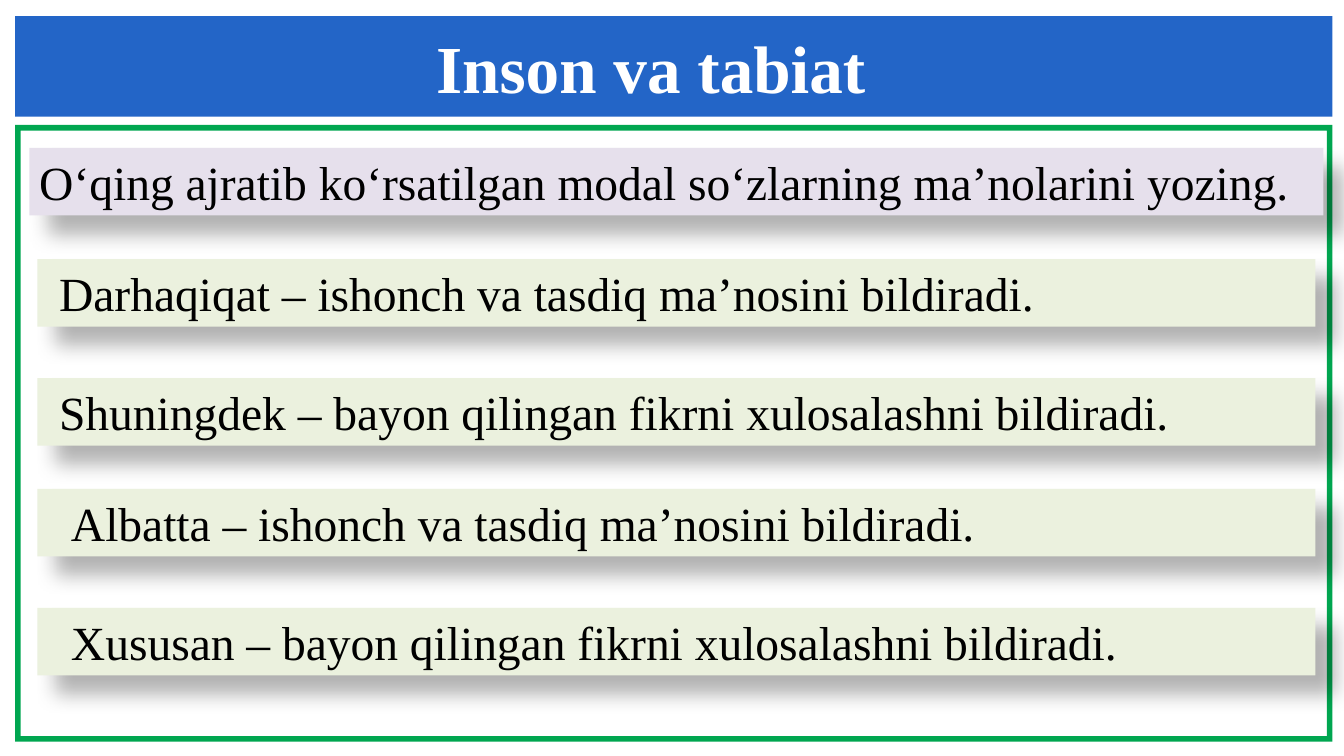
import pptx
import pptx.dml.color
import pptx.enum.shapes
import pptx.enum.text
import pptx.oxml
import pptx.oxml.ns
import pptx.util
from pptx.util import Cm

BLUE = pptx.dml.color.RGBColor(0x23, 0x65, 0xC7)
GREEN = pptx.dml.color.RGBColor(0x00, 0xA6, 0x50)
LILAC = pptx.dml.color.RGBColor(0xE6, 0xE0, 0xEC)
PALE_GREEN = pptx.dml.color.RGBColor(0xEB, 0xF1, 0xDE)
WHITE = pptx.dml.color.RGBColor(0xFF, 0xFF, 0xFF)
BLACK = pptx.dml.color.RGBColor(0x00, 0x00, 0x00)

FONT = "Times New Roman"
TITLE_FORMAT = {"name": FONT, "size": pptx.util.Pt(48), "bold": True}
BODY_FORMAT = {"name": FONT, "size": pptx.util.Pt(34), "bold": False}

PROMPT = "O‘qing ajratib ko‘rsatilgan modal so‘zlarning ma’nolarini yozing."
# Top and text indent in centimetres, then the wording
ANSWERS = [
    (6.53, 0.3, "Darhaqiqat – ishonch va tasdiq ma’nosini bildiradi."),
    (9.53, 0.3, "Shuningdek – bayon qilingan fikrni xulosalashni bildiradi."),
    (12.32, 0.6, "Albatta – ishonch va tasdiq ma’nosini bildiradi."),
    (15.32, 0.6, "Xususan – bayon qilingan fikrni xulosalashni bildiradi."),
]


def paint(shape, color):
    shape.shadow.inherit = False
    shape.fill.solid()
    shape.fill.fore_color.rgb = color
    shape.line.fill.background()


def add_bar(slide, left, top, width, height, color):
    shape = slide.shapes.add_shape(
        pptx.enum.shapes.MSO_SHAPE.RECTANGLE, Cm(left), Cm(top), Cm(width), Cm(height))
    paint(shape, color)
    return shape


def add_frame(slide, left, top, right, bottom, thickness):
    def corners(inset):
        x1, x2 = Cm(left + inset), Cm(right - inset)
        y1, y2 = Cm(top + inset), Cm(bottom - inset)
        return [(x1, y1), (x2, y1), (x2, y2), (x1, y2)]

    outer, inner = corners(0), corners(thickness)
    builder = slide.shapes.build_freeform(*outer[0])
    builder.add_line_segments(outer[1:], close=True)
    builder.move_to(*inner[0])
    builder.add_line_segments(inner[1:], close=True)
    paint(builder.convert_to_shape(), GREEN)


def write(shape, text, color, formats, indent=0):
    frame = shape.text_frame
    frame.word_wrap = True
    frame.vertical_anchor = pptx.enum.text.MSO_ANCHOR.TOP
    frame.margin_left = Cm(0.25 + indent)
    paragraph = frame.paragraphs[0]
    paragraph.alignment = pptx.enum.text.PP_ALIGN.LEFT
    run = paragraph.add_run()
    run.text = text
    for name, value in formats.items():
        setattr(run.font, name, value)
    run.font.color.rgb = color


def add_shadow(shape):
    effects = shape._element.spPr.find(pptx.oxml.ns.qn("a:effectLst"))
    effects.append(pptx.oxml.parse_xml(
        f'<a:outerShdw {pptx.oxml.ns.nsdecls("a")} blurRad="{pptx.util.Pt(15)}" '
        f'dist="{pptx.util.Pt(18)}" dir="2700000" algn="tl" rotWithShape="0">'
        '<a:srgbClr val="000000"><a:alpha val="30000"/></a:srgbClr></a:outerShdw>'))


def add_card(slide, left, top, width, color, text, indent=0):
    card = add_bar(slide, left, top, width, 1.7, color)
    add_shadow(card)
    write(card, text, BLACK, BODY_FORMAT, indent)


def main():
    presentation = pptx.Presentation()
    presentation.slide_width = Cm(33.87)
    presentation.slide_height = Cm(19.05)
    slide = presentation.slides.add_slide(presentation.slide_layouts[6])

    # Green frame and title banner
    add_frame(slide, 0.38, 3.15, 33.58, 18.69, 0.14)
    add_bar(slide, 0.38, 0.41, 33.2, 2.53, BLUE)
    title = slide.shapes.add_textbox(Cm(10.74), Cm(0.53), Cm(15.8), Cm(2.31))
    write(title, "Inson va tabiat", WHITE, TITLE_FORMAT)

    # Task and its answers
    add_card(slide, 0.74, 3.73, 32.61, LILAC, PROMPT)
    for top, indent, text in ANSWERS:
        add_card(slide, 0.94, top, 32.21, PALE_GREEN, text, indent)

    presentation.save("out.pptx")


if __name__ == "__main__":
    main()
